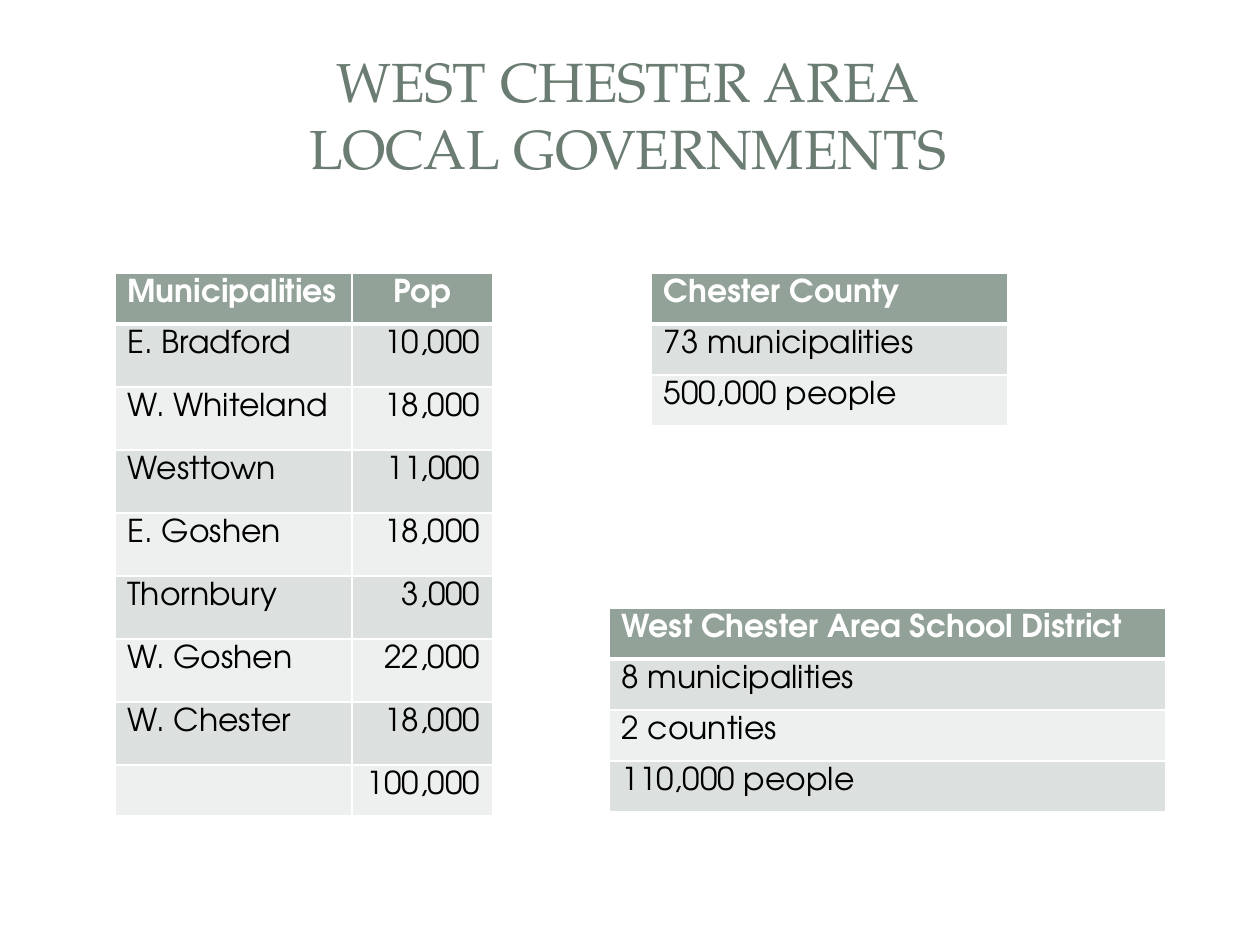
"""Build a slide of three tables on the local governments of the West Chester area."""
from lxml import etree
from pptx import Presentation
from pptx.dml.color import RGBColor
from pptx.enum.shapes import MSO_SHAPE
from pptx.enum.text import MSO_ANCHOR, PP_ALIGN
from pptx.oxml.ns import qn
from pptx.util import Pt

LEFT, CENTER, RIGHT = PP_ALIGN.LEFT, PP_ALIGN.CENTER, PP_ALIGN.RIGHT
MIDDLE = MSO_ANCHOR.MIDDLE
RECTANGLE, ROUNDED = MSO_SHAPE.RECTANGLE, MSO_SHAPE.ROUNDED_RECTANGLE
PX = 914400 / 126

THEME = {
    "title": {"name": "TeX Gyre Pagella", "size": Pt(31.5), "bold": False},
    "head": {"name": "TeX Gyre Adventor", "size": Pt(18), "bold": True},
    "body": {"name": "TeX Gyre Adventor", "size": Pt(18), "bold": False},
    "color": {"title": "6B7D72", "head": "FFFFFF", "body": "000000"},
    "panel": "FFFFFF",
    "head_fill": "93A299",
    "bands": ("DCE0DE", "EEF0EF"),
    "border": "FFFFFF",
    "rule": 1,
    "head_rule": 3,
}

PANELS = [
    {"kind": ROUNDED, "at": (13, 14, 1235, 919), "corner": 0.02, "opacity": 100},
    {"kind": RECTANGLE, "at": (38, 38, 1184, 183), "opacity": 83},
    {"kind": RECTANGLE, "at": (52, 52, 1155, 154), "opacity": 100},
]

TITLE = "WEST CHESTER AREA\vLOCAL GOVERNMENTS"
TITLE_AREA = (59, 53, 1138, 189)
TITLE_MARGINS = {"margin_left": 0, "margin_top": 0, "margin_right": 0, "margin_bottom": 67}

SHORT_ROW, TALL_ROW = 51, 63
TABLES = [
    {
        "at": (115, 273),
        "columns": (237, 141),
        "heights": [SHORT_ROW] + [TALL_ROW] * 7 + [SHORT_ROW],
        "rows": [
            ("Municipalities", "Pop"),
            ("E. Bradford", "10,000"),
            ("W. Whiteland", "18,000"),
            ("Westtown", "11,000"),
            ("E. Goshen", "18,000"),
            ("Thornbury", "3,000"),
            ("W. Goshen", "22,000"),
            ("W. Chester", "18,000"),
            ("", "100,000"),
        ],
    },
    {
        "at": (651, 273),
        "columns": (357,),
        "heights": [SHORT_ROW] * 3,
        "rows": [("Chester County",), ("73 municipalities",), ("500,000 people",)],
    },
    {
        "at": (609, 608),
        "columns": (557,),
        "heights": [SHORT_ROW] * 4,
        "rows": [
            ("West Chester Area School District",),
            ("8 municipalities",),
            ("2 counties",),
            ("110,000 people",),
        ],
    },
]


def px(length):
    return round(length * PX)


def apply(target, values):
    for name, value in values.items():
        setattr(target, name, value)


def write(para, text, style, align):
    para.alignment = align
    if text:
        para.text = text
    for span in para.runs:
        apply(span.font, THEME[style])
        span.font.color.rgb = RGBColor.from_string(THEME["color"][style])


def add_panel(page, content):
    panel = page.shapes.add_shape(content["kind"], *map(px, content["at"]))
    panel.shadow.inherit = False
    panel.line.fill.background()
    panel.fill.solid()
    panel.fill.fore_color.rgb = RGBColor.from_string(THEME["panel"])
    if "corner" in content:
        panel.adjustments[0] = content["corner"]
    if content["opacity"] < 100:
        color = panel._element.spPr.find(qn("a:solidFill"))[0]
        etree.SubElement(color, qn("a:alpha"), val=str(content["opacity"] * 1000))


def add_borders(cell, bottom):
    properties = cell._tc.get_or_add_tcPr()
    for side in "LRTB":
        width = bottom if side == "B" else THEME["rule"]
        line = etree.SubElement(properties, qn(f"a:ln{side}"), w=str(Pt(width)))
        fill = etree.SubElement(line, qn("a:solidFill"))
        etree.SubElement(fill, qn("a:srgbClr"), val=THEME["border"])


def add_title(page):
    box = page.shapes.add_textbox(*map(px, TITLE_AREA))
    frame = box.text_frame
    margins = {name: px(value) for name, value in TITLE_MARGINS.items()}
    apply(frame, {"word_wrap": True, "vertical_anchor": MIDDLE, **margins})
    write(frame.paragraphs[0], TITLE, "title", CENTER)


def add_grid(page, content):
    rows, columns, heights = content["rows"], content["columns"], content["heights"]
    area = (*content["at"], sum(columns), sum(heights))
    table = page.shapes.add_table(len(rows), len(columns), *map(px, area)).table
    for column, width in zip(table.columns, columns):
        column.width = px(width)
    for row, height in zip(table.rows, heights):
        row.height = px(height)
    for r, texts in enumerate(rows):
        head = r == 0
        fill = THEME["head_fill"] if head else THEME["bands"][(r - 1) % 2]
        for c, text in enumerate(texts):
            cell = table.cell(r, c)
            add_borders(cell, THEME["head_rule" if head else "rule"])
            cell.fill.solid()
            cell.fill.fore_color.rgb = RGBColor.from_string(fill)
            align = LEFT if c == 0 else CENTER if head else RIGHT
            write(cell.text_frame.paragraphs[0], text, "head" if head else "body", align)


def main():
    deck = Presentation()
    apply(deck, {"slide_width": px(1260), "slide_height": px(945)})
    page = deck.slides.add_slide(deck.slide_layouts[6])
    for content in PANELS:
        add_panel(page, content)
    add_title(page)
    for content in TABLES:
        add_grid(page, content)
    deck.save("out.pptx")


if __name__ == "__main__":
    main()
